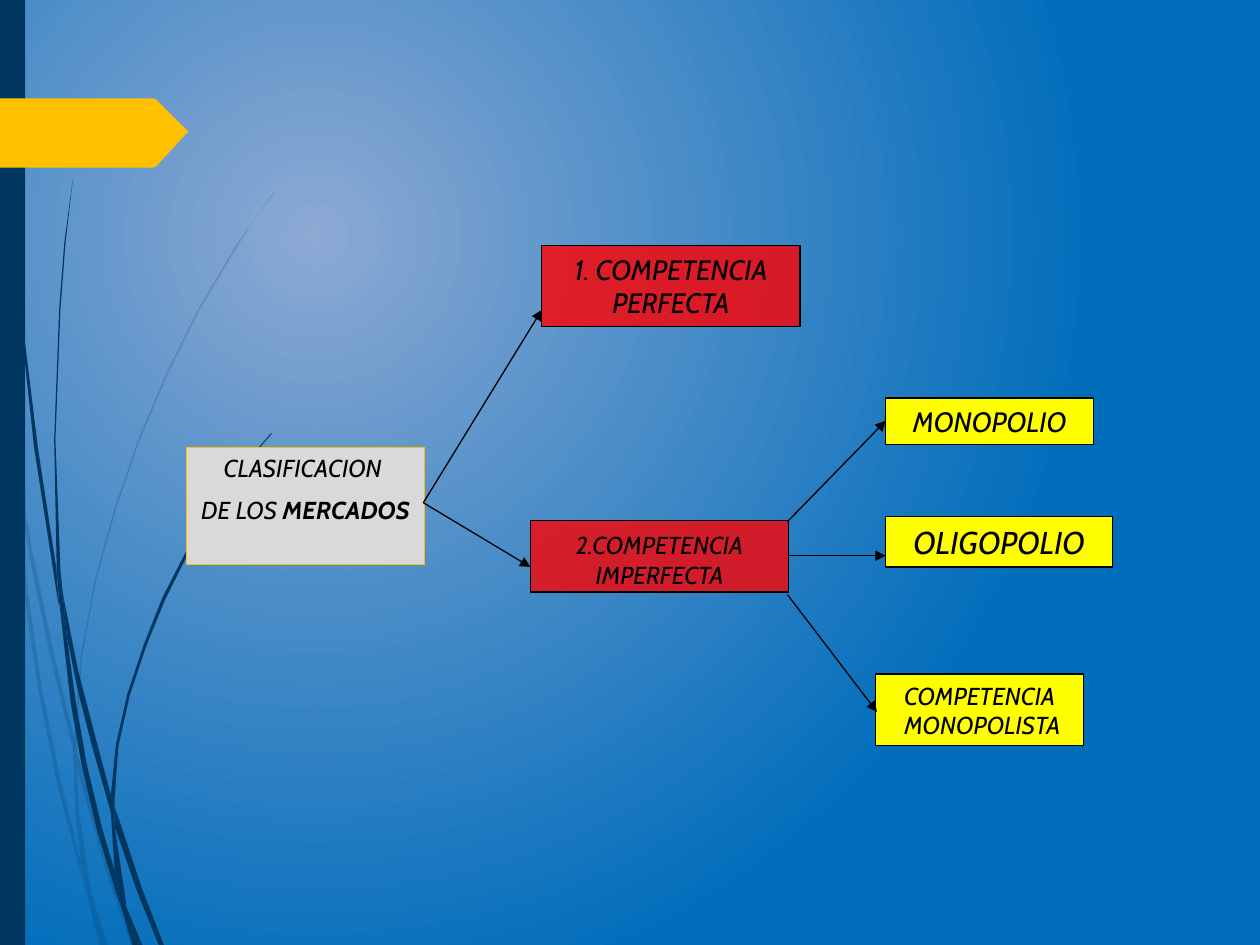
from lxml import etree
from pptx import Presentation
from pptx.dml.color import RGBColor
from pptx.enum.shapes import MSO_CONNECTOR, MSO_SHAPE
from pptx.enum.text import MSO_ANCHOR, PP_ALIGN
from pptx.oxml.ns import qn
from pptx.util import Inches, Pt

RECTANGLE = MSO_SHAPE.RECTANGLE
STRAIGHT = MSO_CONNECTOR.STRAIGHT
TOP, MIDDLE = MSO_ANCHOR.TOP, MSO_ANCHOR.MIDDLE
CENTER = PP_ALIGN.CENTER

FONT = "Cabin"
NAVY, GOLD, RED, YELLOW, GRAY, BLACK = "003760", "FFC000", "FF0000", "FFFF00", "D9D9D9", "000000"

FAINT_STRANDS = [
    [(0.08, 3.5), (0.06, 3.22), (0, 2.82), (0, 2.99), (0.07, 3.44)],
    [(0.4, 5.22), (0.59, 5.99), (0.59, 5.86), (0.43, 5.2), (0.25, 4.34), (0.1, 3.45),
     (0.12, 3.76), (0.25, 4.5)],
    [(0.64, 6.07), (0.61, 5.96), (0.61, 6.1), (0.85, 6.94), (1.04, 7.5), (1.08, 7.5), (0.88, 6.92)],
    [(0.83, 7.5), (0.86, 7.5), (0.73, 7.11)],
    [(0.64, 6.83), (0.48, 6.19), (0.33, 5.45), (0.22, 4.69), (0.12, 3.76), (0.08, 3.5),
     (0.19, 4.7), (0.3, 5.46), (0.45, 6.21), (0.64, 6.93), (0.7, 7.14), (0.69, 7.07)],
    [(0.58, 5.99), (0.6, 6.46), (0.64, 6.83), (0.67, 6.92), (0.73, 7.11), (0.72, 7.06),
     (0.63, 6.46), (0.61, 6.1), (0.61, 6.08)],
    [(0.61, 5.84), (0.65, 5.22), (0.76, 4.62), (0.92, 4.04), (1.11, 3.49), (1.34, 2.95),
     (1.59, 2.45), (1.87, 1.98), (2.01, 1.75), (2.17, 1.54), (2.17, 1.53), (2.01, 1.75),
     (1.86, 1.97), (1.58, 2.44), (1.33, 2.94), (1.1, 3.48), (0.91, 4.03), (0.75, 4.61),
     (0.64, 5.21), (0.59, 5.84), (0.59, 5.86), (0.61, 5.96)],
    [(0.7, 7.14), (0.79, 7.5), (0.82, 7.5)],
    [(0.61, 6.08), (0.61, 6.1), (0.61, 5.96), (0.59, 5.86), (0.58, 5.99)],
    [(0.67, 6.92), (0.65, 6.83), (0.69, 7.07), (0.7, 7.14), (0.82, 7.5), (0.83, 7.5), (0.73, 7.11)],
]
DARK_STRANDS = [
    [(0.05, 1.1), (0.14, 2.33), (0.27, 3.55), (0.46, 4.77), (0.47, 4.81), (0.45, 4.57),
     (0.45, 4.53), (0.3, 3.55), (0.15, 2.32), (0.06, 1.09), (0.04, 0.48), (0.03, 0),
     (0.02, 0), (0.03, 0.48)],
    [(0.73, 5.92), (0.88, 6.45), (0.88, 6.33), (0.88, 6.31), (0.77, 5.9), (0.62, 5.32),
     (0.5, 4.72), (0.53, 5.05), (0.62, 5.49)],
    [(0.94, 6.49), (0.91, 6.41), (0.91, 6.56), (1.09, 7.08), (1.26, 7.5), (1.3, 7.5), (1.13, 7.06)],
    [(0.91, 6.91), (0.81, 6.57), (0.69, 6.07), (0.6, 5.56), (0.53, 5.05), (0.47, 4.77),
     (0.56, 5.57), (0.65, 6.08), (0.77, 6.59), (0.92, 7.08), (0.97, 7.22), (0.96, 7.17)],
    [(0.5, 4.72), (0.48, 4.53), (0.44, 3.49), (0.48, 2.45), (0.52, 1.93), (0.58, 1.41),
     (0.51, 1.93), (0.47, 2.45), (0.43, 3.49), (0.45, 4.49), (0.49, 4.72)],
    [(1.1, 7.5), (1.13, 7.5), (1, 7.19)],
    [(0.47, 4.77), (0.53, 5.05), (0.5, 4.72), (0.49, 4.72), (0.45, 4.49), (0.45, 4.53)],
    [(0.91, 6.33), (0.94, 5.92), (1.03, 5.52), (1.16, 5.13), (1.31, 4.76), (1.49, 4.4),
     (1.69, 4.06), (1.91, 3.74), (2.03, 3.59), (2.16, 3.44), (2.15, 3.44), (2.03, 3.58),
     (1.91, 3.73), (1.68, 4.05), (1.47, 4.39), (1.29, 4.74), (1.14, 5.12), (1.01, 5.51),
     (0.92, 5.91), (0.88, 6.31), (0.91, 6.41)],
    [(0.97, 7.22), (1.05, 7.5), (1.08, 7.5)],
    [(0.88, 6.45), (0.91, 6.91), (0.96, 7.06), (1, 7.19), (1, 7.16), (0.91, 6.56), (0.9, 6.51)],
    [(0.88, 6.45), (0.9, 6.51), (0.91, 6.56), (0.91, 6.41), (0.88, 6.31)],
    [(0.96, 7.06), (0.91, 6.91), (0.96, 7.17), (0.97, 7.22), (1.08, 7.5), (1.1, 7.5), (1, 7.19)],
]
TAB = [(1.49, 0.27), (1.24, 0.54), (1.21, 0.55), (0, 0.55), (0, 0), (1.21, 0),
       (1.24, 0.01), (1.49, 0.26), (1.5, 0.27)]


def color(value):
    """Turn a hex string into a colour."""
    return RGBColor.from_string(value)


def paint(shape, fill, opacity=100, line=None):
    """Give a shape its fill, outline and no shadow."""
    shape.shadow.inherit = False
    shape.fill.solid()
    shape.fill.fore_color.rgb = color(fill)
    if opacity < 100:
        tint = shape.fill._xPr.find(".//" + qn("a:srgbClr"))
        etree.SubElement(tint, qn("a:alpha"), val=str(opacity * 1000))
    if line:
        shape.line.color.rgb = color(line)
        shape.line.width = Pt(0.75)
    else:
        shape.line.fill.background()


def add_outline(slide, left, top, points, fill, opacity=100):
    """Draw a closed outline whose points are inches from left and top."""
    corners = [(Inches(left + x), Inches(top + y)) for x, y in points]
    builder = slide.shapes.build_freeform(*corners[0], scale=1.0)
    builder.add_line_segments(corners[1:], close=True)
    paint(builder.convert_to_shape(), fill, opacity)


def write(paragraph, text, size=14, bold=False):
    """Add an italic black run to a centred paragraph."""
    paragraph.alignment = CENTER
    run = paragraph.add_run()
    run.text = text
    run.font.name = FONT
    run.font.size = Pt(size)
    run.font.italic = True
    run.font.bold = bold
    run.font.color.rgb = color(BLACK)


def add_box(slide, box, lines, fill, size=14, opacity=100, line=BLACK,
            anchor=MIDDLE, inset=0.05, gap=0):
    """Place a labelled box; each line is a list of runs and the second run is bold."""
    shape = slide.shapes.add_shape(RECTANGLE, *map(Inches, box))
    paint(shape, fill, opacity, line)
    frame = shape.text_frame
    frame.word_wrap = True
    frame.vertical_anchor = anchor
    frame.margin_top = Inches(inset)
    for number, runs in enumerate(lines):
        paragraph = frame.add_paragraph() if number else frame.paragraphs[0]
        if number:
            paragraph.space_before = Pt(gap)
        for position, text in enumerate(runs):
            write(paragraph, text, size=size, bold=position > 0)


def add_arrow(slide, start, end):
    """Draw a thin black arrow between two points."""
    connector = slide.shapes.add_connector(STRAIGHT, *map(Inches, start + end))
    connector.line.color.rgb = color(BLACK)
    connector.line.width = Pt(0.75)
    etree.SubElement(connector.line._get_or_add_ln(), qn("a:tailEnd"), type="triangle")
    etree.SubElement(connector._element.spPr, qn("a:effectLst"))


def add_background(slide):
    """Fill the background with a radial blue gradient."""
    fill = slide.background.fill
    fill.gradient()
    for stop, value in zip(fill.gradient_stops, ("8CA9D3", "006DBB")):
        stop.color.rgb = color(value)
    gradient = slide._element.find(".//" + qn("a:gradFill"))
    linear = gradient.find(qn("a:lin"))
    circle = etree.Element(qn("a:path"), path="circle")
    etree.SubElement(circle, qn("a:fillToRect"), l="50000", t="50000", r="100000", b="100000")
    gradient.replace(linear, circle)


def add_decoration(slide, left, top, height):
    """Draw the strands, side band and gold tab at the left edge."""
    for strand in FAINT_STRANDS:
        add_outline(slide, left, top, strand, NAVY, opacity=20)
    for strand in DARK_STRANDS:
        add_outline(slide, left, top, strand, NAVY)
    band = slide.shapes.add_shape(RECTANGLE, *map(Inches, (left, top, 0.2, height)))
    paint(band, NAVY)
    add_outline(slide, left, top + 0.78, TAB, GOLD)


def add_market_tree(slide, left, top):
    """Draw the classification of markets as boxes joined by arrows."""
    add_box(slide, (left + 2.82, top, 2.05, 0.64), [["1. COMPETENCIA PERFECTA"]],
            RED, size=16, opacity=80)
    add_box(slide, (left + 2.73, top + 2.18, 2.05, 0.57), [["2.COMPETENCIA IMPERFECTA"]],
            RED, opacity=78, anchor=TOP, inset=0.08)
    add_box(slide, (left + 5.47, top + 3.4, 1.65, 0.57), [["COMPETENCIA"], [" MONOPOLISTA"]], YELLOW)
    add_box(slide, (left, top + 1.6, 1.89, 0.93), [["CLASIFICACION "], ["DE LOS ", "MERCADOS"]],
            GRAY, line=GOLD, anchor=TOP, gap=7)
    add_box(slide, (left + 5.55, top + 1.21, 1.65, 0.37), [["MONOPOLIO"]], YELLOW, size=16)
    add_box(slide, (left + 5.55, top + 2.15, 1.8, 0.4), [["OLIGOPOLIO"]], YELLOW, size=18)
    root = (left + 1.88, top + 2.04)
    branch = left + 4.77
    add_arrow(slide, root, (left + 2.82, top + 0.51))
    add_arrow(slide, root, (left + 2.73, top + 2.55))
    add_arrow(slide, (branch, top + 2.77), (left + 5.48, top + 3.7))
    add_arrow(slide, (branch, top + 2.46), (left + 5.55, top + 2.46))
    add_arrow(slide, (branch, top + 2.19), (left + 5.55, top + 1.39))


def main():
    """Build and save the slide."""
    presentation = Presentation()
    presentation.slide_width = Inches(10)
    presentation.slide_height = Inches(7.5)
    slide = presentation.slides.add_slide(presentation.slide_layouts[6])
    add_background(slide)
    add_decoration(slide, 0, 0, 7.5)
    add_market_tree(slide, 1.48, 1.95)
    presentation.save("out.pptx")


if __name__ == "__main__":
    main()
